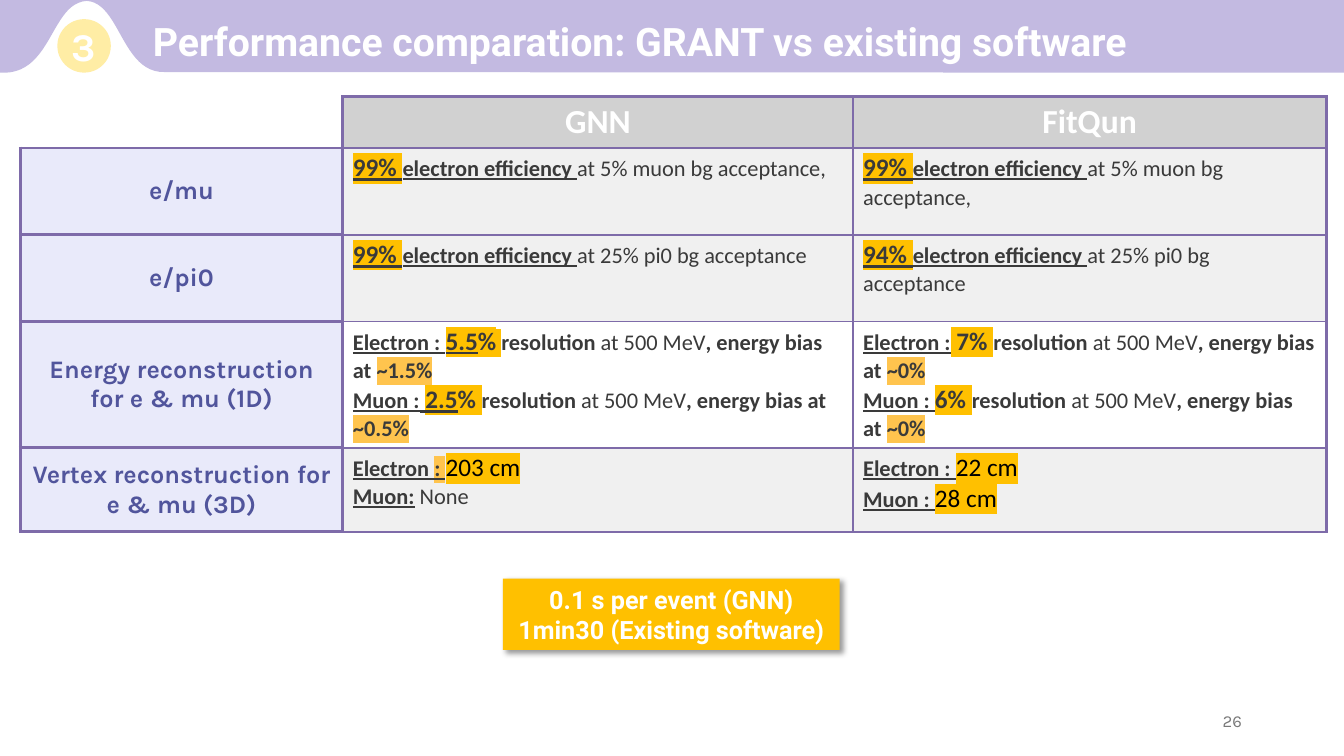
from pptx import Presentation
from pptx.dml.color import RGBColor
from pptx.enum.shapes import MSO_SHAPE as Kind
from pptx.enum.text import MSO_ANCHOR as Anchor, PP_ALIGN as Align
from pptx.oxml import parse_xml
from pptx.oxml.ns import nsdecls
from pptx.util import Pt

# Content
TITLE = "Performance comparation: GRANT vs existing software"
HEADS = ["GNN", "FitQun"]
NOTE = ["0.1 s per event (GNN)", "1min30 (Existing software)"]


# Run flags: b bold, u underline, L large, k black, y yellow, o orange
def rate(share, rest):
    return [(share, "bLuy"), ("electron efficiency ", "bu"), (rest, "")]


def bias(start, value):
    return start + [("resolution ", "b"), ("at 500 MeV", ""),
                    (", energy bias at ", "b"), (value, "bo")]


MUON = "at 5% muon bg acceptance,"
PION = "at 25% pi0 bg acceptance"
ROWS = [
    ("e/mu", [[rate("99% ", MUON)], [rate("99% ", MUON)]]),
    ("e/pi0", [[rate("99% ", PION)], [rate("94% ", PION)]]),
    ("Energy reconstruction for e & mu (1D)", [
        [bias([("Electron : ", "bu"), ("5.5", "bLuy"), ("%", "bLy"),
               (" ", "by")], "~1.5%"),
         bias([("Muon :", "bu"), (" ", "bLu"), ("2.5", "bLuy"),
               ("% ", "bLy")], "~0.5%")],
        [bias([("Electron :", "bu"), (" 7% ", "bLy")], "~0%"),
         bias([("Muon : ", "bu"), ("6% ", "bLy")], "~0%")]]),
    ("Vertex reconstruction for e & mu (3D)", [
        [[("Electron ", "bu"), (": ", "buo"), ("203 cm", "Lky")],
         [("Muon:", "bu"), (" None", "")]],
        [[("Electron : ", "bu"), ("22 cm", "Lky")],
         [("Muon : ", "bu"), ("28 cm", "Lky")]]]),
]
WIDTHS = [230.5, 364.5, 338]
HEIGHTS = [33, 62, 62, 81.5, 60]
FILLS = ["F0F0F0", "F0F0F0", "FFFFFF", "F0F0F0"]
MARKS = {"y": "FFC000", "o": "FFC44E"}
EDGE = "7E6BA9"

deck = Presentation()
deck.slide_width, deck.slide_height = Pt(960), Pt(540)
slide = deck.slides.add_slide(deck.slide_layouts[6])
shapes = slide.shapes


# Helpers
def hue(code):
    return RGBColor.from_string(code)


def paint(shape, code):
    shape.shadow.inherit = False
    shape.fill.solid()
    shape.fill.fore_color.rgb = hue(code)
    shape.line.fill.background()


def write(frame, lines, size, face, code, align=Align.CENTER, bold=True):
    frame.word_wrap = True
    for i, line in enumerate(lines):
        para = frame.paragraphs[0] if i == 0 else frame.add_paragraph()
        para.text = line
        para.alignment = align
        font = para.font
        font.size, font.name, font.bold = Pt(size), face, bold
        font.color.rgb = hue(code)


def write_runs(frame, lines):
    for i, line in enumerate(lines):
        para = frame.paragraphs[0] if i == 0 else frame.add_paragraph()
        para.font.name = "Calibri"
        for text, flags in line:
            run = para.add_run()
            run.text = text
            font = run.font
            font.size = Pt(18 if "L" in flags else 16)
            font.bold, font.underline = "b" in flags, "u" in flags
            font.color.rgb = hue("000000" if "k" in flags else "3A3A3A")
            for flag in flags:
                if flag in MARKS:
                    font._element.append(parse_xml(
                        f'<a:highlight {nsdecls("a")}>'
                        f'<a:srgbClr val="{MARKS[flag]}"/></a:highlight>'))


def border(cell, row, col):
    wide, thin = 2.25, 1.5
    sides = dict.fromkeys("LRTB", wide)
    if row == 0 and col == 0:
        sides.update(L=0, T=0)
    elif row and col:
        sides = {"L": wide if col == 1 else thin,
                 "R": wide if col == 2 else thin,
                 "T": wide if row == 1 else thin, "B": thin}
    for side, width in sides.items():
        ink = (f'<a:solidFill><a:srgbClr val="{EDGE}"/></a:solidFill>'
               if width else "<a:noFill/>")
        cell._tc.get_or_add_tcPr().append(parse_xml(
            f'<a:ln{side} {nsdecls("a")} w="{Pt(width)}">{ink}</a:ln{side}>'))


def shade(cell, code):
    cell.fill.solid()
    cell.fill.fore_color.rgb = hue(code)


def curve(start, pull, push, end, steps=24):
    for i in range(1, steps + 1):
        t = i / steps
        s = 1 - t
        yield tuple(Pt(s**3 * a + 3 * s * s * t * b + 3 * s * t * t * c
                       + t**3 * d)
                    for a, b, c, d in zip(start, pull, push, end))


# Comparison table
frame = shapes.add_table(len(HEIGHTS), len(WIDTHS), Pt(14.4), Pt(69.1),
                         Pt(sum(WIDTHS)), Pt(sum(HEIGHTS)))
table = frame.table
table.first_row = table.horz_banding = False
for col, width in zip(table.columns, WIDTHS):
    col.width = Pt(width)
for row, height in zip(table.rows, HEIGHTS):
    row.height = Pt(height)
for r in range(len(HEIGHTS)):
    for c in range(len(WIDTHS)):
        border(table.cell(r, c), r, c)

table.cell(0, 0).fill.background()
for c, head in enumerate(HEADS, 1):
    cell = table.cell(0, c)
    shade(cell, "D1D1D1")
    write(cell.text_frame, [head], 24, "Calibri", "FFFFFF")
for r, (label, pair) in enumerate(ROWS, 1):
    cell = table.cell(r, 0)
    shade(cell, "E9EAFA")
    cell.vertical_anchor = Anchor.MIDDLE
    write(cell.text_frame, [label], 18, "Karla", "51559C")
    for c, lines in enumerate(pair, 1):
        cell = table.cell(r, c)
        shade(cell, FILLS[r - 1])
        write_runs(cell.text_frame, lines)

# Title band with its bump
right, top, left = (117.4, 51.5), (62, 0.7), (3.6, 52)
pen = shapes.build_freeform(Pt(960), Pt(52), scale=1.0)
pen.add_line_segments([
    (Pt(right[0]), Pt(right[1])),
    *curve(right, (87, 52), (85.7, 2), top),
    *curve(top, (36.7, 2), (37.4, 51), left),
    (0, Pt(52)), (0, 0), (Pt(960), 0)])
paint(pen.convert_to_shape(), "C3BAE1")

# Section number and title
disc = shapes.add_shape(Kind.OVAL, Pt(41), Pt(13.7), Pt(38.2), Pt(38.2))
paint(disc, "FFEDA5")
body = disc.text_frame
body.margin_left = body.margin_right = body.margin_top = body.margin_bottom = 0
body.vertical_anchor = Anchor.MIDDLE
write(body, ["3"], 28, "Karla", "FFFFFF")

title = shapes.add_textbox(Pt(102.2), Pt(8.6), Pt(857.5), Pt(41))
write(title.text_frame, [TITLE], 28, "Roboto", "FFFFFF", Align.LEFT)

# Page number
page = shapes.add_textbox(Pt(678.2), Pt(500.4), Pt(216), Pt(28.8))
page.text_frame.vertical_anchor = Anchor.MIDDLE
write(page.text_frame, ["26"], 12, "Karla", "797979", Align.RIGHT, False)

# Timing note
note = shapes.add_shape(Kind.RECTANGLE, Pt(359.3), Pt(413.3), Pt(240.5), Pt(51))
paint(note, "FFC000")
note._element.spPr.find("{*}effectLst").append(parse_xml(
    f'<a:outerShdw {nsdecls("a")} blurRad="{Pt(4)}" dist="{Pt(3)}" '
    'dir="2700000" algn="tl" rotWithShape="0"><a:srgbClr val="000000">'
    '<a:alpha val="40000"/></a:srgbClr></a:outerShdw>'))
write(note.text_frame, NOTE, 18, "Roboto", "FFFFFF")

deck.save("out.pptx")
